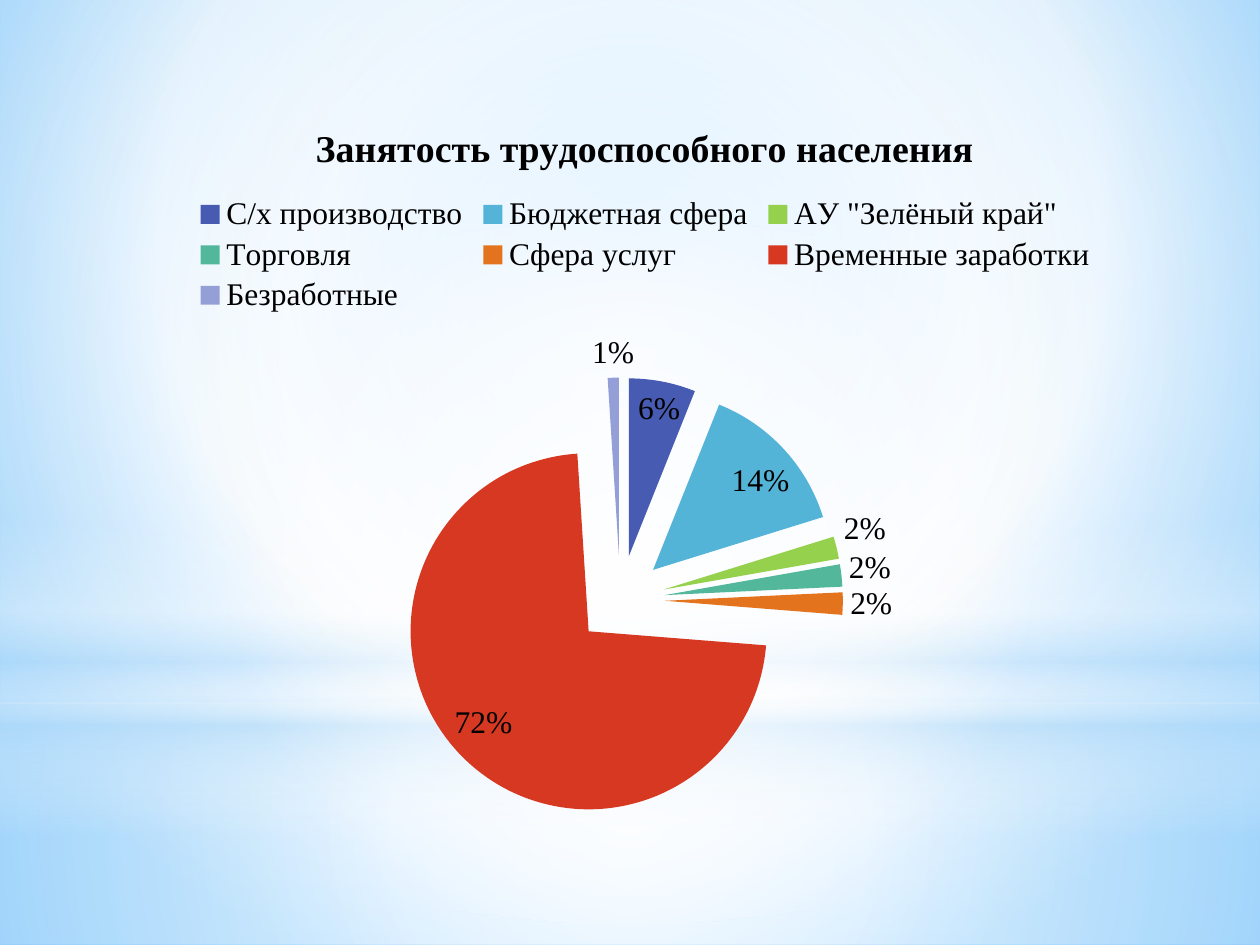
"""Build a slide with an exploded pie chart of employment over a soft blue backdrop."""
from lxml import etree
from pptx import Presentation, util as u
from pptx.chart.data import CategoryChartData
from pptx.dml.color import RGBColor
from pptx.enum import chart as charts, shapes
from pptx.oxml import ns

BLACK = RGBColor(0, 0, 0)
WHITE = RGBColor(0xFF, 0xFF, 0xFF)
SKY = RGBColor(0x9E, 0xD5, 0xFF)
AZURE = RGBColor(0x5B, 0xB9, 0xFF)
PALE = RGBColor(0xB4, 0xDC, 0xFA)
FONT = "Times New Roman"
TITLE = "Занятость трудоспособного населения"
CENTRE = (50, 50, 50, 50)
SECTORS = [
    ("С/х производство", 6, RGBColor(0x46, 0x5B, 0xB1)),
    ("Бюджетная сфера", 14, RGBColor(0x54, 0xB4, 0xD8)),
    ('АУ "Зелёный край"', 2, RGBColor(0x95, 0xD1, 0x4C)),
    ("Торговля", 2, RGBColor(0x53, 0xB7, 0x9B)),
    ("Сфера услуг", 2, RGBColor(0xE3, 0x73, 0x1C)),
    ("Временные заработки", 72, RGBColor(0xD7, 0x38, 0x21)),
    ("Безработные", 1, RGBColor(0x94, 0x9F, 0xD8)),
]
BACKDROP = [
    (shapes.MSO_SHAPE.RECTANGLE, 0.744, 0.256, CENTRE,
     [(0, WHITE, 91), (37, WHITE, 76), (100, PALE, 79)]),
    (shapes.MSO_SHAPE.RECTANGLE, 0, 0.744, CENTRE,
     [(0, WHITE, 89), (48, WHITE, 62), (100, PALE, 79)]),
    (shapes.MSO_SHAPE.RECTANGLE, 0.55, 0.333, None,
     [(0, WHITE, 0), (29, WHITE, 30), (45, PALE, 40), (55, WHITE, 26), (65, PALE, 60), (100, WHITE, 0)]),
    (shapes.MSO_SHAPE.OVAL, 0.233, 0.744, CENTRE,
     [(0, WHITE, 100), (56, WHITE, 0)]),
]


def set_gradient(fill, parent, stops, focus):
    """Fill with a circular gradient around focus, or a vertical one without it."""
    fill.solid()
    gradient = etree.Element(ns.qn("a:gradFill"), rotWithShape="1")
    stop_list = etree.SubElement(gradient, ns.qn("a:gsLst"))
    for position, color, opacity in stops:
        stop = etree.SubElement(stop_list, ns.qn("a:gs"), pos=str(position * 1000))
        shade = etree.SubElement(stop, ns.qn("a:srgbClr"), val=str(color))
        etree.SubElement(shade, ns.qn("a:alpha"), val=str(opacity * 1000))
    if focus:
        circle = etree.SubElement(gradient, ns.qn("a:path"), path="circle")
        sides = {side: str(share * 1000) for side, share in zip("ltrb", focus)}
        etree.SubElement(circle, ns.qn("a:fillToRect"), **sides)
    else:
        etree.SubElement(gradient, ns.qn("a:lin"), ang="5400000", scaled="0")
    solid = parent.find(".//" + ns.qn("a:solidFill"))
    solid.getparent().replace(solid, gradient)


def set_font(font, size, bold=False):
    """Apply the chart typeface."""
    font.name = FONT
    font.size = u.Pt(size)
    font.bold = bold
    font.color.rgb = BLACK


presentation = Presentation()
presentation.slide_width = u.Inches(10)
presentation.slide_height = u.Inches(7.5)
width, height = presentation.slide_width, presentation.slide_height
slide = presentation.slides.add_slide(presentation.slide_layouts[6])
set_gradient(slide.background.fill, slide.element,
             [(0, SKY, 100), (60, WHITE, 100), (100, AZURE, 100)], (20, 10, 20, 60))

for kind, top, share, focus, stops in BACKDROP:
    shape = slide.shapes.add_shape(kind, 0, int(height * top), width, int(height * share))
    shape.shadow.inherit = False
    shape.line.fill.background()
    set_gradient(shape.fill, shape.element.spPr, stops, focus)

data = CategoryChartData(number_format='0"%"')
data.categories = [name for name, value, color in SECTORS]
data.add_series(TITLE, [value for name, value, color in SECTORS])
chart = slide.shapes.add_chart(
    charts.XL_CHART_TYPE.PIE, int(width * 0.075), int(height * 0.101),
    int(width * 0.874), int(height * 0.788), data).chart
set_font(chart.font, 18)

chart.has_title = True
run = chart.chart_title.text_frame.paragraphs[0].add_run()
run.text = TITLE
set_font(run.font, 21.6, bold=True)
chart.chart_title.include_in_layout = False

chart.has_legend = True
chart.legend.position = charts.XL_LEGEND_POSITION.TOP
chart.legend.include_in_layout = False
set_font(chart.legend.font, 18)

plot = chart.plots[0]
plot.vary_by_categories = True
plot.has_data_labels = True
labels = plot.data_labels
labels.show_value = True
labels.show_percentage = False
labels.number_format = '0"%"'
labels.number_format_is_linked = False
labels.position = charts.XL_LABEL_POSITION.BEST_FIT
set_font(labels.font, 18)

series = plot.series[0]
for index, (name, value, color) in enumerate(SECTORS):
    point = series.points[index]
    point.format.fill.solid()
    point.format.fill.fore_color.rgb = color
    point.format.line.fill.background()
explosion = etree.Element(ns.qn("c:explosion"), val="25")
series._element.find(ns.qn("c:dPt")).addprevious(explosion)

presentation.save("out.pptx")
